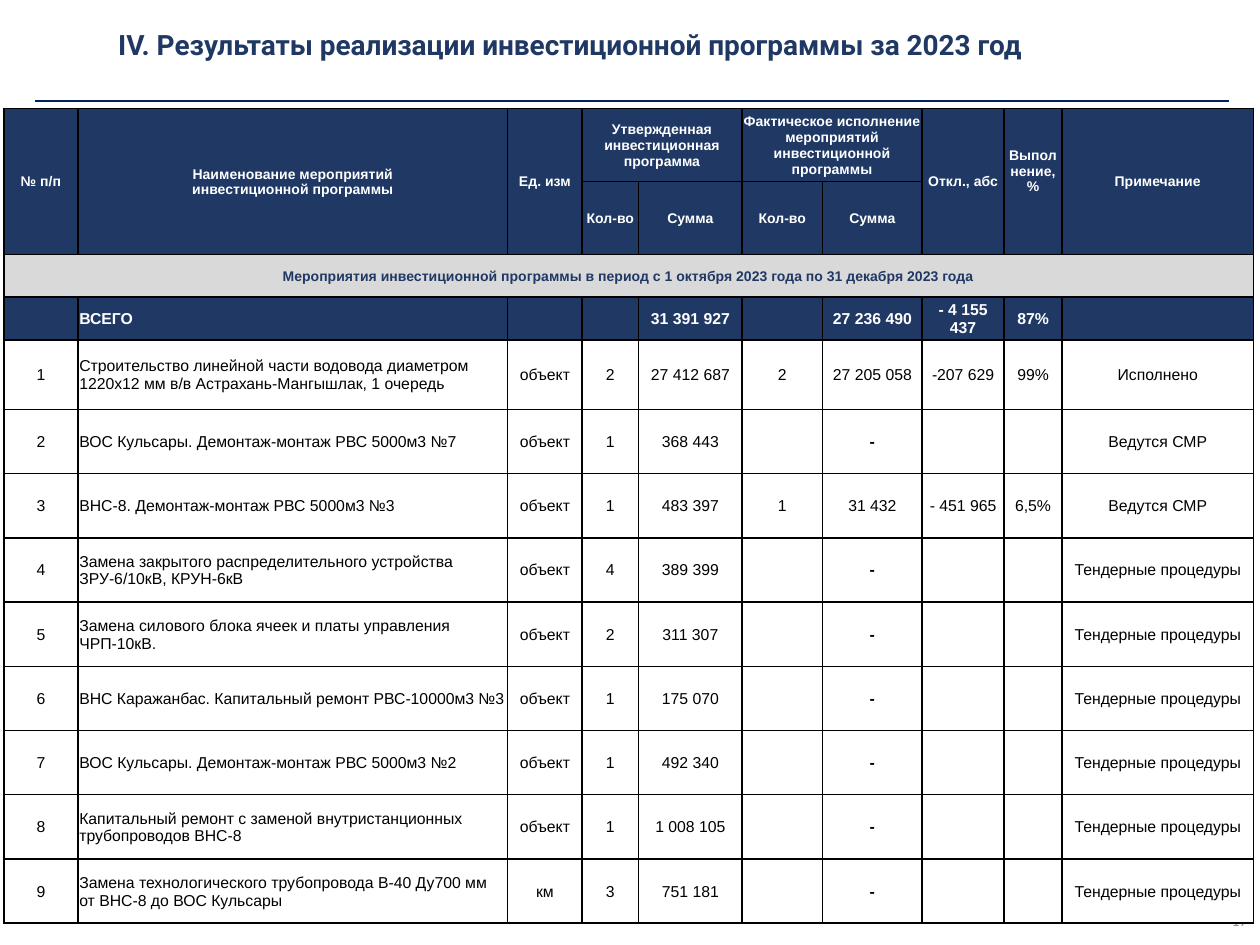
"""Build the slide with the results of the 2023 investment programme."""
import lxml.etree
import pptx
import pptx.dml.color
import pptx.enum.shapes
import pptx.enum.text
import pptx.oxml
import pptx.oxml.ns
import pptx.util

Inches = pptx.util.Inches
Align = pptx.enum.text.PP_ALIGN
Middle = pptx.enum.text.MSO_ANCHOR.MIDDLE

TITLE = "IV. Результаты реализации инвестиционной программы за 2023 год"
PAGE = "17"
HEADS = [
    ["№ п/п", "Наименование мероприятий\nинвестиционной программы", "Ед. изм",
     "Утвержденная инвестиционная программа", "",
     "Фактическое исполнение мероприятий инвестиционной программы", "",
     "Откл., абс", "Выполнение,\n%", "Примечание"],
    ["", "", "", "Кол-во", "Сумма", "Кол-во", "Сумма", "", "", ""],
]
BAND = ["Мероприятия инвестиционной программы в период с 1 октября 2023 года по 31 декабря 2023 года"] + [""] * 9
TOTAL = ["", "ВСЕГО", "", "", "31 391 927", "", "27 236 490", "- 4 155 437", "87%", ""]
DONE, WORK, BIDS = "Исполнено", "Ведутся СМР", "Тендерные процедуры"
NONE = ("", "-", "", "")
ITEMS = [
    ("Строительство линейной части водовода диаметром 1220х12 мм в/в Астрахань-Мангышлак, 1 очередь",
     "объект", "2", "27 412 687", "2", "27 205 058", "-207 629", "99%", DONE),
    ("ВОС Кульсары. Демонтаж-монтаж РВС 5000м3 №7", "объект", "1", "368 443", *NONE, WORK),
    ("ВНС-8. Демонтаж-монтаж РВС 5000м3 №3",
     "объект", "1", "483 397", "1", "31 432", "- 451 965", "6,5%", WORK),
    ("Замена закрытого распределительного устройства ЗРУ-6/10кВ, КРУН-6кВ",
     "объект", "4", "389 399", *NONE, BIDS),
    ("Замена силового блока ячеек и платы управления ЧРП-10кВ.",
     "объект", "2", "311 307", *NONE, BIDS),
    ("ВНС Каражанбас. Капитальный ремонт РВС-10000м3 №3",
     "объект", "1", "175 070", *NONE, BIDS),
    ("ВОС Кульсары. Демонтаж-монтаж РВС 5000м3 №2", "объект", "1", "492 340", *NONE, BIDS),
    ("Капитальный ремонт с заменой внутристанционных трубопроводов ВНС-8",
     "объект", "1", "1 008 105", *NONE, BIDS),
    ("Замена технологического трубопровода В-40 Ду700 мм от ВНС-8 до ВОС Кульсары",
     "км", "3", "751 181", *NONE, BIDS),
]
WIDTHS = [0.59, 3.41, 0.59, 0.45, 0.82, 0.64, 0.79, 0.65, 0.46, 1.52]
HEIGHTS = [0.58, 0.55, 0.34, 0.34, 0.55] + [0.51] * 8
SPANS = [(0, col, 1, col) for col in (0, 1, 2, 7, 8, 9)]
SPANS += [(0, 3, 0, 4), (0, 5, 0, 6), (2, 0, 2, 9)]
THEME = {
    "navy": "203864", "rule": "002060", "gray": "D9D9D9", "white": "FFFFFF",
    "black": "000000", "dim": "8C8C8C",
    "face": "Arial", "title": "Roboto", "note": "Calibri",
    "big": 16, "body": 9, "small": 8,
}
STYLES = {
    "head": ("navy", "white", "small", True),
    "band": ("gray", "navy", "small", True),
    "total": ("navy", "white", "body", True),
    "item": ("white", "black", "body", False),
}


def color(key):
    return pptx.dml.color.RGBColor.from_string(THEME[key])


def write(frame, text, face, size, ink, bold=False, align=Align.LEFT):
    frame.text = text
    frame.word_wrap = True
    for para in frame.paragraphs:
        para.alignment = align
        font = para.font
        font.name, font.size, font.bold = THEME[face], pptx.util.Pt(THEME[size]), bold
        font.color.rgb = color(ink)


def label(slide, box, *args, **opts):
    frame = slide.shapes.add_textbox(*map(Inches, box)).text_frame
    frame.vertical_anchor = Middle
    write(frame, *args, **opts)


def border(cell):
    props = cell._tc.get_or_add_tcPr()
    for side in "LRTB":
        props.append(pptx.oxml.parse_xml(
            f'<a:ln{side} {pptx.oxml.ns.nsdecls("a")} w="12700"><a:solidFill>'
            f'<a:srgbClr val="{THEME["black"]}"/></a:solidFill></a:ln{side}>'))


def style(cell, text, kind, col):
    fill, ink, size, bold = STYLES[kind]
    left = col == 1 and kind in ("total", "item")
    cell.margin_left = cell.margin_right = cell.margin_top = Inches(0.01)
    cell.margin_bottom = Inches(0.17 if text.endswith("\n%") else 0)
    cell.vertical_anchor = Middle
    border(cell)
    cell.fill.solid()
    cell.fill.fore_color.rgb = color(fill)
    write(cell.text_frame, text, "face", size, ink, bold or text == "-",
          Align.LEFT if left else Align.CENTER)


def grid(slide):
    rows = [("head", row) for row in HEADS] + [("band", BAND), ("total", TOTAL)]
    rows += [("item", [str(num), *item]) for num, item in enumerate(ITEMS, 1)]
    box = (0.03, 0.86, sum(WIDTHS), sum(HEIGHTS))
    table = slide.shapes.add_table(len(rows), len(WIDTHS), *map(Inches, box)).table
    for col, width in zip(table.columns, WIDTHS):
        col.width = Inches(width)
    for row, height in zip(table.rows, HEIGHTS):
        row.height = Inches(height)
    for top, (kind, texts) in enumerate(rows):
        for col, text in enumerate(texts):
            style(table.cell(top, col), text, kind, col)
    for top, left, end, right in SPANS:
        table.cell(top, left).merge(table.cell(end, right))


def rule(slide):
    line = slide.shapes.add_connector(
        pptx.enum.shapes.MSO_CONNECTOR.STRAIGHT, *map(Inches, (0.28, 0.8, 9.75, 0.8)))
    line.line.color.rgb = color("rule")
    line.line.width = pptx.util.Pt(1)
    lxml.etree.SubElement(line._element.spPr, pptx.oxml.ns.qn("a:effectLst"))


def main():
    deck = pptx.Presentation()
    deck.slide_width, deck.slide_height = Inches(10), Inches(7.5)
    slide = deck.slides.add_slide(deck.slide_layouts[6])
    label(slide, (7.75, 7.1, 2.25, 0.4), PAGE, "note", "body", "dim", align=Align.RIGHT)
    rule(slide)
    grid(slide)
    label(slide, (0.84, 0.14, 9.16, 0.42), TITLE, "title", "big", "navy", bold=True)
    deck.save("out.pptx")


if __name__ == "__main__":
    main()
